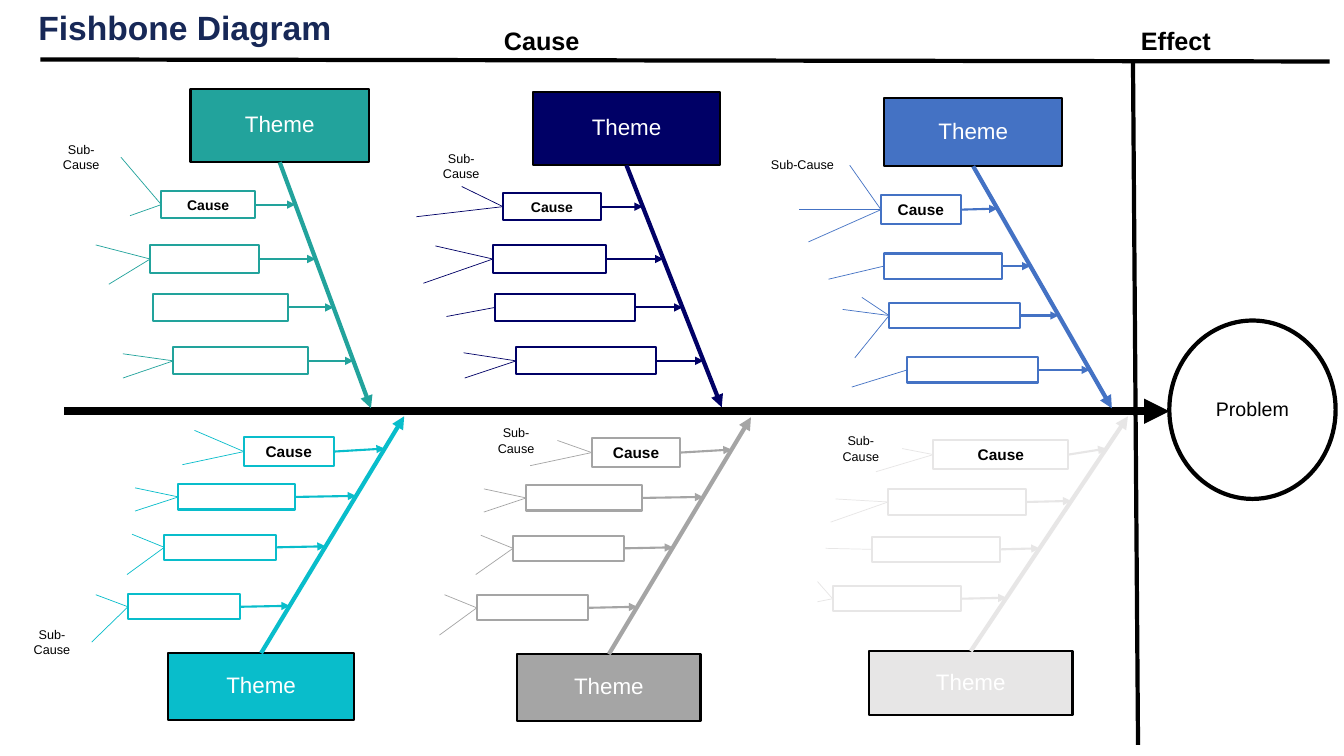
from dataclasses import dataclass
from typing import NamedTuple

import lxml.etree
import pptx
import pptx.dml.color
import pptx.enum.shapes
import pptx.enum.text
import pptx.oxml.ns
import pptx.util

COLS, ROWS = 133.33, 75
CELL = pptx.util.Inches(0.1)


class Point(NamedTuple):
    x: float
    y: float


class Box(NamedTuple):
    x: float
    y: float
    w: float
    h: float


class Rib(NamedTuple):
    x: float
    mid: float
    w: float
    rise: float
    twigs: tuple[tuple[float, float], ...] = ()


@dataclass(frozen=True)
class Theme:
    font: str = "Arial"
    ink: str = "000000"
    paper: str = "FFFFFF"
    title: str = "172857"
    title_size: int = 24
    header_size: int = 18
    theme_size: int = 16
    problem_size: int = 14
    sub_size: int = 9
    thick: float = 6
    bold: float = 3
    medium: float = 1.5
    thin: float = 0.5


@dataclass(frozen=True)
class Bone:
    color: str
    head: Box
    tip: Point
    cause_size: int
    cause_h: float
    rib_h: float
    ribs: tuple[Rib, ...]

    @property
    def base(self) -> Point:
        x, y, w, h = self.head
        return Point(x + w / 2, y + h if y < self.tip.y else y)

    def spine_at(self, y: float) -> Point:
        share = (y - self.base.y) / (self.tip.y - self.base.y)
        return Point(self.base.x + share * (self.tip.x - self.base.x), y)


THEME = Theme()
TITLE = Box(2.8, 0.2, 44.8, 5)
HEADERS = (("Cause", Box(49, 2, 10.9, 4)), ("Effect", Box(112.2, 2, 10.3, 4)))
RULES = ((Point(4, 5.9), Point(131.9, 6.1)), (Point(112.4, 6.2), Point(112.9, 73.9)))
BACKBONE = (Point(6.4, 40.8), Point(116, 40.8))
PROBLEM = Box(116, 31.8, 16.5, 17.7)
SUB_CAUSES = (
    Box(4.1, 13.6, 7.9, 4), Box(41.8, 14.5, 7.9, 4), Box(74.9, 15.1, 9.4, 2.5),
    Box(1.2, 61.7, 7.9, 4), Box(47.1, 41.7, 8.2, 4), Box(81.3, 42.5, 8.2, 4),
)
BONES = (
    Bone("22A39C", Box(18.9, 8.8, 17.7, 7.3), Point(36.8, 40.5), 10, 2.7, 2.7, (
        Rib(16, 20.3, 9.3, 0, ((12, 15.6), (12.9, 21.4))),
        Rib(14.9, 25.7, 10.8, 0, ((10.8, 28.2), (9.5, 24.3))),
        Rib(15.2, 30.5, 13.4, 0),
        Rib(17.2, 35.8, 13.4, 0, ((12.2, 37.5), (12.2, 35.1))))),
    Bone("000066", Box(52.9, 9.1, 18.5, 7.3), Point(71.6, 40.4), 10, 2.7, 2.7, (
        Rib(49.9, 20.5, 9.7, 0, ((45.8, 18.5), (41.3, 21.5))),
        Rib(48.9, 25.7, 11.2, 0, ((42, 28.1), (43.2, 24.4))),
        Rib(49.1, 30.5, 13.9, 0, ((44.3, 31.4),)),
        Rib(51.2, 35.8, 13.9, 0, ((46.1, 37.5), (46, 35))))),
    Bone("4472C4", Box(87.7, 9.7, 17.7, 6.8), Point(110.3, 40.5), 11, 2.9, 2.5, (
        Rib(87.4, 20.8, 7.9, 0.1, ((84.3, 16.4), (79.3, 20.8), (80.2, 24))),
        Rib(87.7, 26.4, 11.7, 0, ((82.2, 27.7),)),
        Rib(88.2, 31.3, 13, 0, ((84.8, 35.5), (85.5, 29.5), (83.6, 30.7))),
        Rib(90, 36.7, 13, 0, ((84.5, 38.4),)))),
    Bone("09BDCB", Box(16.7, 64.8, 18.4, 6.6), Point(40.1, 41.3), 11, 2.9, 2.5, (
        Rib(24.2, 44.8, 8.9, 0.3, ((19.3, 42.7), (18.1, 46.1))),
        Rib(17.7, 49.3, 11.6, 0.1, ((13.4, 50.7), (13.4, 48.4))),
        Rib(16.3, 54.3, 11.1, 0.1, ((13.1, 53), (12.6, 57))),
        Rib(12.7, 60.2, 11.1, 0.1, ((9.5, 59), (9.1, 63.7))))),
    Bone("A5A5A5", Box(51.3, 64.9, 18.2, 6.6), Point(74.5, 41.4), 11, 2.9, 2.5, (
        Rib(58.7, 44.9, 8.8, 0.3, ((55.3, 43.7), (52.6, 46.2))),
        Rib(52.2, 49.4, 11.5, 0.1, ((48, 50.8), (48, 48.5))),
        Rib(50.9, 54.4, 11, 0.1, ((47.7, 53.1), (47.2, 57))),
        Rib(47.3, 60.3, 11, 0.1, ((44.1, 59), (43.6, 63))))),
    Bone("E7E6E6", Box(86.2, 64.6, 20.2, 6.3), Point(111.9, 41.3), 11, 2.9, 2.5, (
        Rib(92.6, 45.1, 13.4, 0.6, ((89.5, 44.5), (86.9, 46.8))),
        Rib(88.1, 49.8, 13.7, 0.1, ((82.9, 49.5), (82.4, 51.8))),
        Rib(86.5, 54.5, 12.7, 0.1, ((81.9, 54.4),)),
        Rib(82.6, 59.4, 12.7, 0.1, ((81.1, 57.7), (81.1, 59.7))))),
)


def rgb(color: str) -> pptx.dml.color.RGBColor:
    return pptx.dml.color.RGBColor.from_string(color)


def emu(*cells: float) -> list[int]:
    return [round(c * CELL) for c in cells]


def write(sp, text: str, size: int, color: str, bold: bool = False,
          center: bool = True, middle: bool = False) -> None:
    tf = sp.text_frame
    tf.word_wrap = True
    tf.auto_size = pptx.enum.text.MSO_AUTO_SIZE.NONE
    anchor = pptx.enum.text.MSO_ANCHOR
    tf.vertical_anchor = anchor.MIDDLE if middle else anchor.TOP
    p = tf.paragraphs[0]
    align = pptx.enum.text.PP_ALIGN
    p.alignment = align.CENTER if center else align.LEFT
    p.add_run().text = text
    p.font.name = THEME.font
    p.font.size = pptx.util.Pt(size)
    p.font.bold = bold
    p.font.color.rgb = rgb(color)


def add_text(slide, box: Box, text: str, size: int, bold: bool = False, center: bool = True) -> None:
    write(slide.shapes.add_textbox(*emu(*box)), text, size, THEME.ink, bold, center)


def add_box(slide, box: Box, line: str, width: float, fill: str | None = None, oval: bool = False):
    kind = pptx.enum.shapes.MSO_SHAPE
    sp = slide.shapes.add_shape(kind.OVAL if oval else kind.RECTANGLE, *emu(*box))
    sp.shadow.inherit = False
    sp.line.color.rgb = rgb(line)
    sp.line.width = pptx.util.Pt(width)
    if fill:
        sp.fill.solid()
        sp.fill.fore_color.rgb = rgb(fill)
    else:
        sp.fill.background()
    return sp


def add_line(slide, start: Point, end: Point, color: str, width: float, arrow: bool = False) -> None:
    straight = pptx.enum.shapes.MSO_CONNECTOR.STRAIGHT
    cxn = slide.shapes.add_connector(straight, *emu(*start, *end))
    cxn.line.color.rgb = rgb(color)
    cxn.line.width = pptx.util.Pt(width)
    qn, spPr = pptx.oxml.ns.qn, cxn.element.spPr
    if arrow:
        lxml.etree.SubElement(spPr.find(qn("a:ln")), qn("a:tailEnd"), type="triangle")
    lxml.etree.SubElement(spPr, qn("a:effectLst"))


def add_bone(slide, bone: Bone) -> None:
    sp = add_box(slide, bone.head, THEME.ink, THEME.medium, bone.color)
    write(sp, "Theme", THEME.theme_size, THEME.paper, middle=True)
    sp.text_frame.paragraphs[0].line_spacing = 0.9
    add_line(slide, bone.base, bone.tip, bone.color, THEME.bold, arrow=True)
    for i, rib in enumerate(bone.ribs):
        h = bone.rib_h if i else bone.cause_h
        sp = add_box(slide, Box(rib.x, rib.mid - h / 2, rib.w, h), bone.color, THEME.medium)
        if i == 0:
            write(sp, "Cause", bone.cause_size, THEME.ink, bold=True, middle=True)
        add_line(slide, Point(rib.x + rib.w, rib.mid), bone.spine_at(rib.mid - rib.rise),
                 bone.color, THEME.medium, arrow=True)
        for twig in rib.twigs:
            add_line(slide, Point(rib.x, rib.mid), Point(*twig), bone.color, THEME.thin)


def main() -> None:
    prs = pptx.Presentation()
    prs.slide_width, prs.slide_height = emu(COLS, ROWS)
    slide = prs.slides.add_slide(prs.slide_layouts[5])
    title = slide.shapes.title
    title.left, title.top, title.width, title.height = emu(*TITLE)
    write(title, "Fishbone Diagram", THEME.title_size, THEME.title, bold=True, center=False)
    for start, end in RULES:
        add_line(slide, start, end, THEME.ink, THEME.bold)
    for text, box in HEADERS:
        add_text(slide, box, text, THEME.header_size, bold=True, center=False)
    sp = add_box(slide, PROBLEM, THEME.ink, THEME.bold, THEME.paper, oval=True)
    write(sp, "Problem", THEME.problem_size, THEME.ink, middle=True)
    sp.text_frame.paragraphs[0].line_spacing = 0.9
    add_line(slide, *BACKBONE, THEME.ink, THEME.thick, arrow=True)
    for bone in BONES:
        add_bone(slide, bone)
    for box in SUB_CAUSES:
        add_text(slide, box, "Sub-Cause", THEME.sub_size)
    prs.save("out.pptx")


if __name__ == "__main__":
    main()
